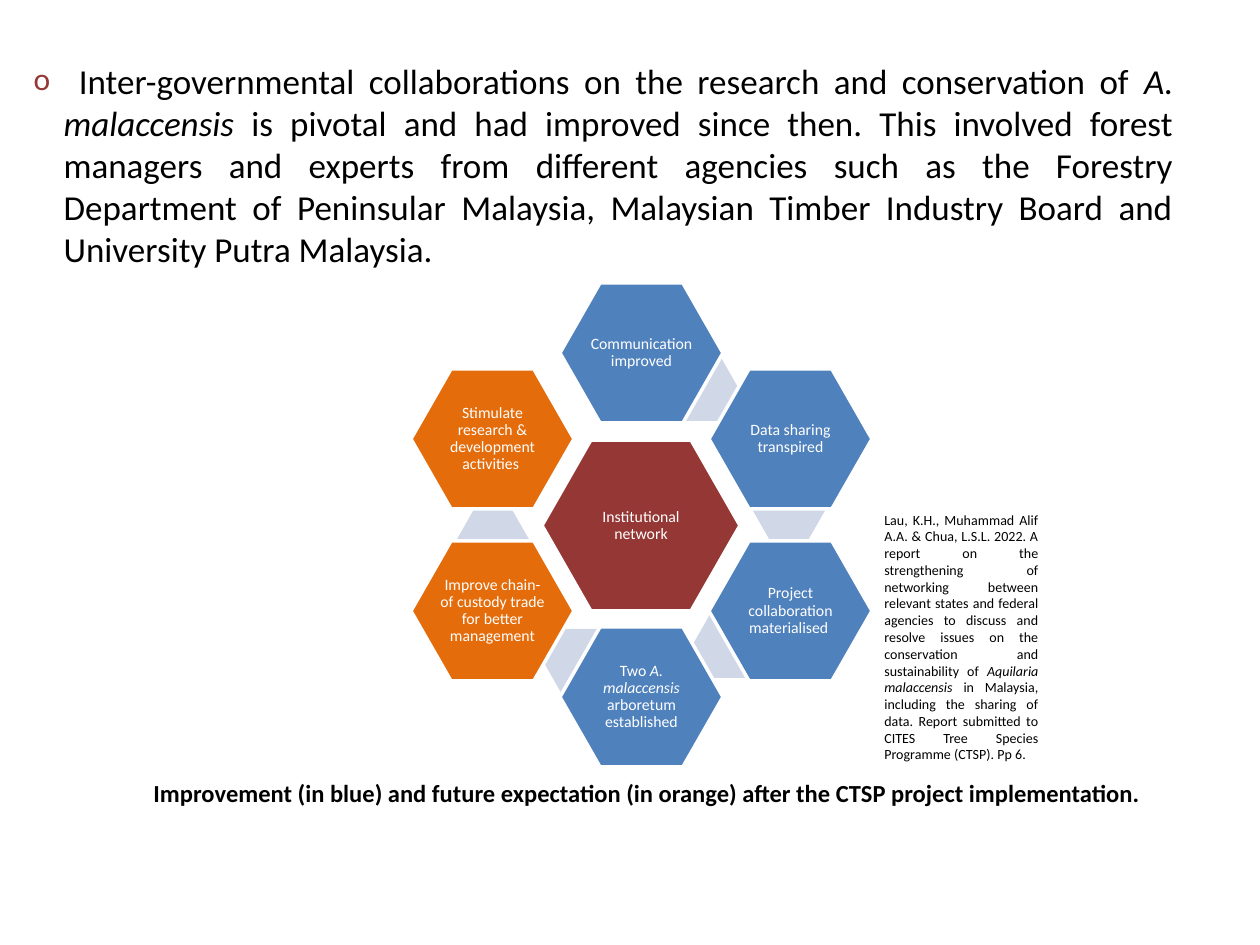
from dataclasses import dataclass
from math import cos, radians, sin

from lxml import etree
from pptx import Presentation
from pptx import util as u
from pptx.dml.color import RGBColor
from pptx.enum import shapes, text
from pptx.oxml.ns import qn

PX_PER_INCH = 126


@dataclass(frozen=True)
class Theme:
    font: str = "Calibri"
    lead_font: str = "Arial"
    ink: str = "000000"
    paper: str = "FFFFFF"
    core: str = "953735"
    improved: str = "4F81BD"
    future: str = "E46C0A"
    link: str = "D0D8E8"
    body_size: int = 20
    lead_size: int = 18
    caption_size: int = 14
    node_size: int = 9
    citation_size: int = 8


@dataclass(frozen=True)
class Span:
    text: str
    italic: bool = False


@dataclass(frozen=True)
class Hexagon:
    x: int  # centre
    y: int
    width: int
    height: int
    fill: str
    spans: tuple[Span, ...] = ()


THEME = Theme()


def px(length: int) -> u.Emu:
    return u.Emu(round(length * 914400 / PX_PER_INCH))


def write(para, content: str, *, size: int, color: str = THEME.ink,
          font: str = THEME.font, bold: bool = False, italic: bool = False) -> None:
    span = para.add_run()
    span.text = content
    span.font.name = font
    span.font.size = u.Pt(size)
    span.font.bold = bold
    span.font.italic = italic
    span.font.color.rgb = RGBColor.from_string(color)


def write_spans(para, spans: tuple[Span, ...], **style) -> None:
    for span in spans:
        write(para, span.text, italic=span.italic, **style)


def add_bullet(para, char: str, color: str, indent: int) -> None:
    props = para._p.get_or_add_pPr()
    props.set("marL", str(px(indent)))
    props.set("indent", str(-px(indent)))
    bullet_color = etree.SubElement(props, qn("a:buClr"))
    etree.SubElement(bullet_color, qn("a:srgbClr"), val=color)
    etree.SubElement(props, qn("a:buFont"), typeface=THEME.font)
    etree.SubElement(props, qn("a:buChar"), char=char)


def add_text_box(page, left: int, top: int, width: int, height: int):
    box = page.shapes.add_textbox(px(left), px(top), px(width), px(height))
    box.text_frame.word_wrap = True
    return box.text_frame.paragraphs[0]


def draw_hexagon(page, item: Hexagon) -> None:
    shape = page.shapes.add_shape(
        shapes.MSO_SHAPE.HEXAGON, px(item.x - item.width // 2),
        px(item.y - item.height // 2), px(item.width), px(item.height))
    shape.adjustments[0] = 0.286
    shape.shadow.inherit = False
    shape.fill.solid()
    shape.fill.fore_color.rgb = RGBColor.from_string(item.fill)
    if not item.spans:
        shape.line.fill.background()
        return
    shape.line.color.rgb = RGBColor.from_string(THEME.paper)
    shape.line.width = u.Pt(2)
    frame = shape.text_frame
    frame.word_wrap = True
    frame.vertical_anchor = text.MSO_ANCHOR.MIDDLE
    frame.margin_left = frame.margin_right = px(1)
    frame.margin_top = frame.margin_bottom = px(1)
    para = frame.paragraphs[0]
    para.alignment = text.PP_ALIGN.CENTER
    para.line_spacing = 0.9
    write_spans(para, item.spans, size=THEME.node_size, color=THEME.paper)


def on_ring(angle: int, radius: int) -> tuple[int, int]:
    """Point on the ring, with the angle clockwise from the top."""
    return (round(CENTRE_X + radius * sin(radians(angle))),
            round(CENTRE_Y - radius * cos(radians(angle))))


CENTRE_X, CENTRE_Y = 641, 525
STEP = 60
LINK_LEAD = 24

INTRO = (
    Span("Inter-governmental collaborations on the research and conservation of "),
    Span("A. malaccensis", italic=True),
    Span(" is pivotal and had improved since then. This involved forest managers "
         "and experts from different agencies such as the Forestry Department of "
         "Peninsular Malaysia, Malaysian Timber Industry Board and University "
         "Putra Malaysia."),
)
CORE = (Span("Institutional network"),)
# Clockwise from the top
NODES = (
    (THEME.improved, (Span("Communication improved"),)),
    (THEME.improved, (Span("Data sharing transpired"),)),
    (THEME.improved, (Span("Project collaboration materialised "),)),
    (THEME.improved, (Span("Two "), Span("A. malaccensis ", italic=True),
                      Span("arboretum established"))),
    (THEME.future, (Span("Improve chain-of custody trade for better management"),)),
    (THEME.future, (Span("Stimulate research & development activities "),)),
)
CAPTION = ("Improvement (in blue) and future expectation (in orange) "
           "after the CTSP project implementation.")
CITATION = (
    Span("Lau, K.H., Muhammad Alif A.A. & Chua, L.S.L. 2022. A report on the "
         "strengthening of networking between relevant states and federal agencies "
         "to discuss and resolve issues on the conservation and sustainability of "),
    Span("Aquilaria malaccensis", italic=True),
    Span(" in Malaysia, including the sharing of data. Report submitted to CITES "
         "Tree Species Programme (CTSP). Pp 6."),
)


def main() -> None:
    deck = Presentation()
    deck.slide_width, deck.slide_height = px(1260), px(945)
    page = deck.slides.add_slide(deck.slide_layouts[1])
    title = page.shapes.title
    title.element.getparent().remove(title.element)

    # Introductory bullet
    body = page.placeholders[1]
    body.left, body.top, body.width, body.height = px(21), px(53), px(1165), px(224)
    body.text_frame.auto_size = text.MSO_AUTO_SIZE.NONE
    para = body.text_frame.paragraphs[0]
    para.alignment = text.PP_ALIGN.JUSTIFY
    para.space_before = u.Pt(0)
    add_bullet(para, "o", THEME.core, indent=30)
    write(para, " ", size=THEME.lead_size, font=THEME.lead_font)
    write_spans(para, INTRO, size=THEME.body_size)

    # Hexagon cluster: core, links, then the outer nodes
    draw_hexagon(page, Hexagon(CENTRE_X, CENTRE_Y, 198, 171, THEME.core, CORE))
    for index in range(len(NODES) - 1):
        x, y = on_ring(LINK_LEAD + index * STEP, radius=149)
        draw_hexagon(page, Hexagon(x, y, 74, 64, THEME.link))
    for index, (fill, spans) in enumerate(NODES):
        x, y = on_ring(index * STEP, radius=172)
        draw_hexagon(page, Hexagon(x, y, 163, 140, fill, spans))

    # Caption
    para = add_text_box(page, 141, 772, 1013, 43)
    write(para, CAPTION, size=THEME.caption_size, bold=True)

    # Citation
    para = add_text_box(page, 872, 505, 179, 267)
    para.alignment = text.PP_ALIGN.JUSTIFY
    write_spans(para, CITATION, size=THEME.citation_size)

    deck.save("out.pptx")


if __name__ == "__main__":
    main()
